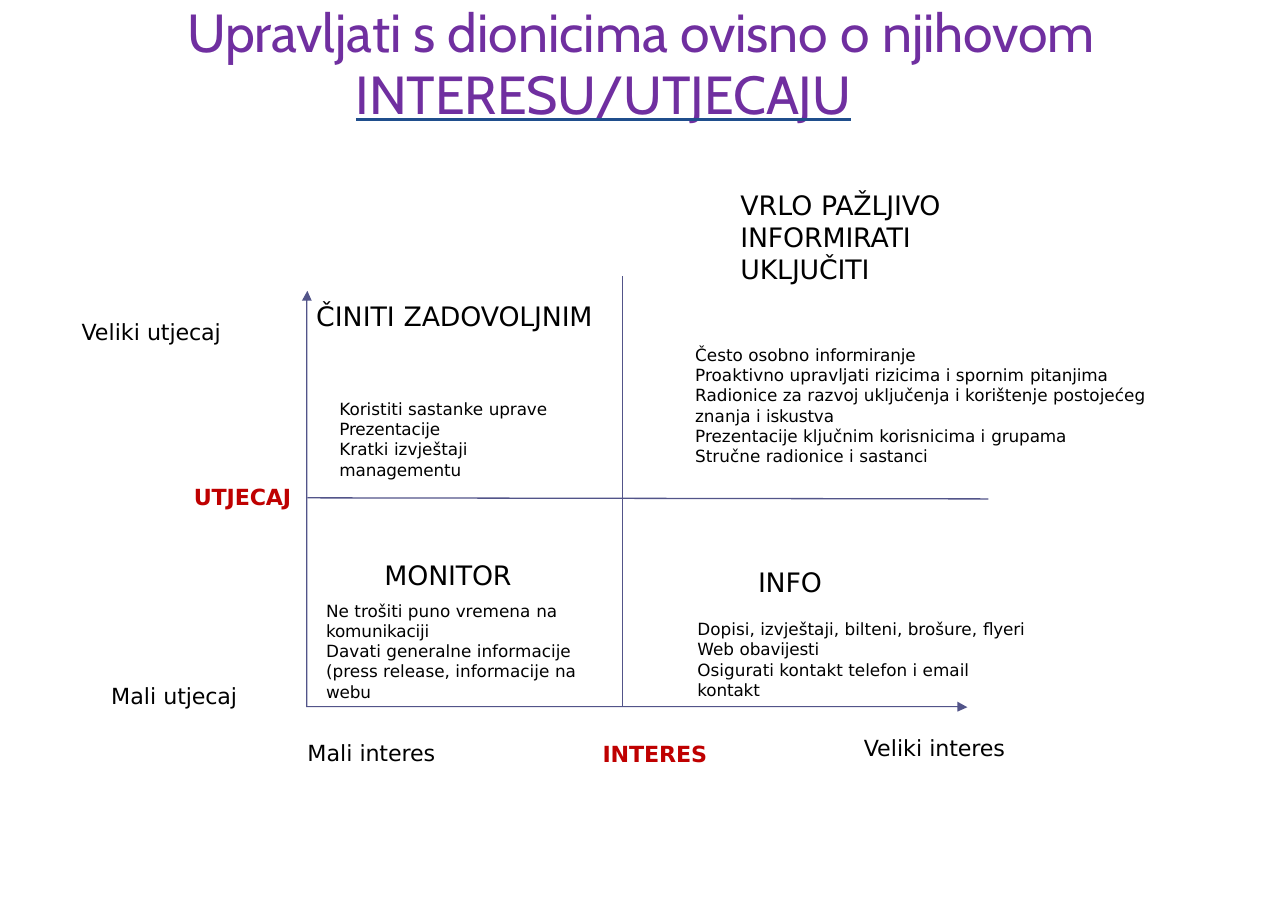
from lxml.etree import SubElement
from pptx import Presentation
from pptx.dml.color import RGBColor
from pptx.enum.text import MSO_ANCHOR, MSO_AUTO_SIZE, PP_ALIGN
from pptx.oxml.ns import qn
from pptx.util import Inches, Pt

COLOURS = {
    "title": "702FA0",
    "underline": "1F4E8C",
    "axis": "525489",
    "axis_name": "BF0000",
    "text": "000000",
}
FONTS = {"title": "Cabin", "text": "DejaVu Sans"}
SIZES = {"title": 35, "heading": 17.5, "label": 14.5, "body": 11}
TIGHT = "-10"


class StakeholderSlide:
    def __init__(self, deck):
        self.page = deck.slides.add_slide(deck.slide_layouts[5])

    def prepare(self, box):
        frame = box.text_frame
        frame.word_wrap = True
        frame.auto_size = MSO_AUTO_SIZE.NONE
        frame.vertical_anchor = MSO_ANCHOR.TOP
        frame.margin_left = frame.margin_right = 0
        frame.margin_top = frame.margin_bottom = 0
        return frame

    def add_spans(self, para, text, size, colour="text", font="text", bold=False):
        loose, _, tight = text.rpartition("|")
        for part, spacing in ((loose, "0"), (tight, TIGHT)):
            if part:
                span = para.add_run()
                span.text = part
                span.font.name = FONTS[font]
                span.font.size = Pt(SIZES[size])
                span.font.bold = bold
                span.font.color.rgb = RGBColor.from_string(COLOURS[colour])
                span.font._element.set("spc", spacing)
        return span

    def add_title(self, first, second):
        box = self.page.shapes.title
        box.left, box.top = Inches(0.29), Inches(0.02)
        box.width, box.height = Inches(11.05), Inches(1.13)
        frame = self.prepare(box)
        upper, lower = frame.paragraphs[0], frame.add_paragraph()
        upper.alignment, lower.alignment = PP_ALIGN.CENTER, PP_ALIGN.LEFT
        lower._p.get_or_add_pPr().set("marL", str(Inches(2.94)))
        for para, text in ((upper, first), (lower, second)):
            para.line_spacing = Pt(40.1)
            para.space_before = Pt(0)
            span = self.add_spans(para, text, "title", "title", "title")
        span.font.underline = True
        latin = span.font._element.find(qn("a:latin"))
        underline = SubElement(span.font._element, qn("a:uFill"))
        fill = SubElement(underline, qn("a:solidFill"))
        SubElement(fill, qn("a:srgbClr"), val=COLOURS["underline"])
        latin.addprevious(underline)

    def add_text(self, left, top, width, height, lines, gap=0, **style):
        box = self.page.shapes.add_textbox(
            Inches(left), Inches(top), Inches(width), Inches(height))
        frame = self.prepare(box)
        for index, (text, size) in enumerate(lines):
            para = frame.add_paragraph() if index else frame.paragraphs[0]
            para.space_before = Pt(gap if index == 1 else 0)
            self.add_spans(para, text, size, **style)
        return frame

    def add_label(self, left, top, text, **style):
        self.add_text(left, top, 1.4, 0.28, [(text, "label")], **style)

    def add_heading(self, left, top, width, height, text):
        self.add_text(left, top, width, height, [(text, "heading")])

    def add_list(self, left, top, width, height, items):
        self.add_text(left, top, width, height, [(item, "body") for item in items])

    def add_quadrant(self, left, top, width, height, heading, indent, gap, items):
        lines = [(heading, "heading")] + [(item, "body") for item in items]
        frame = self.add_text(left, top, width, height, lines, gap)
        frame.paragraphs[0]._p.get_or_add_pPr().set("marL", str(Inches(indent)))

    def add_outline(self, contours, closed):
        builder = None
        for contour in contours:
            start, *others = [(Inches(x), Inches(y)) for x, y in contour]
            if builder is None:
                builder = self.page.shapes.build_freeform(*start, scale=1.0)
            else:
                builder.move_to(*start)
            builder.add_line_segments(others, close=closed)
        shape = builder.convert_to_shape()
        shape.shadow.inherit = False
        return shape

    def add_axes(self, outline):
        shape = self.add_outline([outline], closed=True)
        shape.fill.solid()
        shape.fill.fore_color.rgb = RGBColor.from_string(COLOURS["axis"])
        shape.line.fill.background()

    def add_dividers(self, *contours):
        shape = self.add_outline(contours, closed=False)
        shape.fill.background()
        shape.line.color.rgb = RGBColor.from_string(COLOURS["axis"])
        shape.line.width = Pt(0.84)


def main():
    deck = Presentation()
    deck.slide_width, deck.slide_height = Inches(11.69), Inches(8.27)
    slide = StakeholderSlide(deck)

    slide.add_axes([
        (8.78, 6.42), (8.69, 6.37), (8.69, 6.41), (2.79, 6.41),
        (2.79, 2.73), (2.83, 2.73), (2.79, 2.64), (2.74, 2.73),
        (2.78, 2.73), (2.78, 6.42), (8.69, 6.42), (8.69, 6.46),
    ])
    slide.add_dividers([(5.65, 2.51), (5.65, 6.41)], [(2.79, 4.52), (8.97, 4.53)])

    slide.add_title("Upravljati s dionicima ovisno o |njihovom", "INTERESU/UTJECAJU")

    for left, top, text in (
        (5.47, 6.72, "INTERES"),
        (1.76, 4.39, "UTJECAJ"),
    ):
        slide.add_label(left, top, text, colour="axis_name", bold=True)
    for left, top, text in (
        (2.79, 6.71, "Mali |interes"),
        (7.84, 6.67, "Veliki |interes"),
        (0.74, 2.89, "Veliki |utjecaj"),
        (1.01, 6.19, "Mali |utjecaj"),
    ):
        slide.add_label(left, top, text)

    slide.add_heading(2.87, 2.72, 2.76, 0.32, "ČINITI |ZADOVOLJNIM")
    slide.add_list(3.08, 3.62, 2.2, 0.8, [
        "Koristiti sastanke |uprave",
        "Prezentacije",
        "Kratki izvještaji| managementu",
    ])
    slide.add_heading(6.72, 1.71, 1.98, 0.91, "VRLO |PAŽLJIVO INFORMIRATI UKLJUČITI")
    slide.add_list(6.31, 3.13, 4.2, 1.13, [
        "Često osobno |informiranje",
        "Proaktivno upravljati rizicima i spornim |pitanjima",
        "Radionice za razvoj uključenja i korištenje postojećeg znanja i| iskustva",
        "Prezentacije ključnim korisnicima i |grupama",
        "Stručne radionice i |sastanci",
    ])
    slide.add_quadrant(2.96, 5.07, 2.37, 1.31, "MONITOR", 0.53, 6.5, [
        "Ne trošiti puno vremena |na komunikaciji",
        "Davati generalne informacije (press release, informacije |na webu",
    ])
    slide.add_quadrant(6.33, 5.14, 3.05, 1.2, "INFO", 0.55, 13.5, [
        "Dopisi, izvještaji, bilteni, brošure, |flyeri",
        "Web |obavijesti",
        "Osigurati kontakt telefon i email |kontakt",
    ])

    deck.save("out.pptx")


if __name__ == "__main__":
    main()
